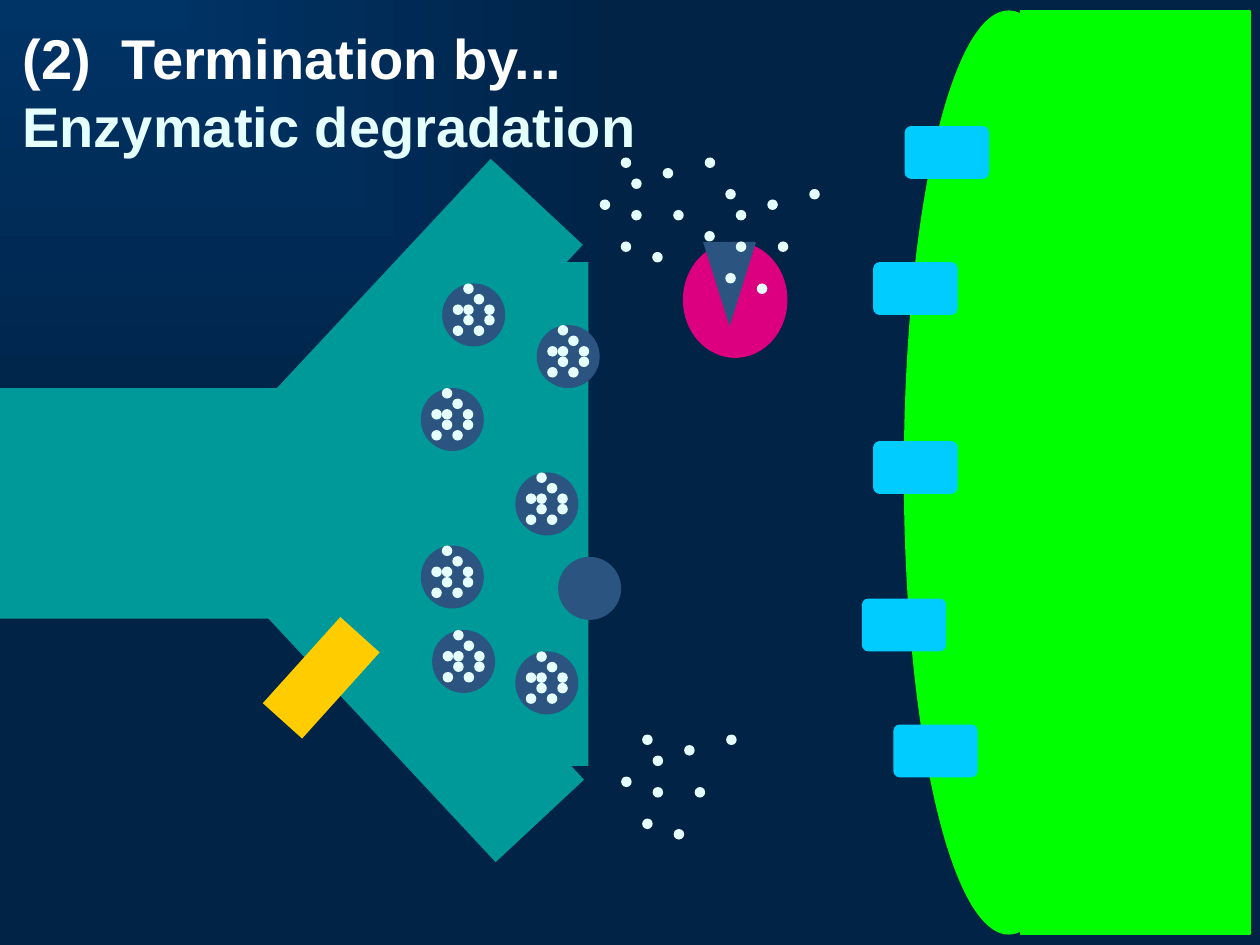
from lxml.etree import SubElement
from pptx import Presentation
from pptx.dml.color import RGBColor
from pptx.enum.shapes import MSO_SHAPE as SHAPE
from pptx.enum.text import MSO_AUTO_SIZE as AUTO_SIZE, PP_ALIGN as ALIGN
from pptx.oxml.ns import qn
from pptx.util import Inches, Pt

NAVY = RGBColor(0x00, 0x33, 0x66)
DEEP_NAVY = RGBColor(0x00, 0x23, 0x46)
WHITE = RGBColor(0xFF, 0xFF, 0xFF)
PALE = RGBColor(0xE5, 0xFF, 0xFF)
TEAL = RGBColor(0x00, 0x99, 0x99)
SLATE = RGBColor(0x2B, 0x54, 0x81)
MAGENTA = RGBColor(0xDC, 0x00, 0x81)
GREEN = RGBColor(0x00, 0xFF, 0x00)
SKY = RGBColor(0x00, 0xCC, 0xFF)
AMBER = RGBColor(0xFF, 0xCC, 0x00)

# Transmitter molecules sit on a grid of twelfths of an inch
UNIT = 1 / 12
VESICLE_DOTS = [(1, 2), (3, 4), (4, 2), (3, 1), (1, 4),
                (2, 2), (4, 3), (2, 0), (2, 3)]
CLOUD_DOTS = [(0, 4), (5, 9), (6, 1), (10, 0), (2, 8),
              (3, 2), (7, 5), (2, 0), (3, 5)]

VESICLES = [(3.34, 3.08), (3.34, 4.33), (4.09, 3.75), (4.26, 2.58),
            (4.09, 5.17), (3.43, 5), (3.51, 2.25)]
EMPTY_VESICLE = (4.43, 4.42)
CLOUDS = [(5.59, 1.5), (4.76, 1.25), (4.93, 5.83)]
RECEPTORS = [(7.18, 1), (6.93, 2.08), (6.93, 3.5), (6.84, 4.75), (7.09, 5.75)]


def add_filled(shapes, kind, x, y, w, h, color, rotation=0, outlined=False):
    sp = shapes.add_shape(kind, Inches(x), Inches(y), Inches(w), Inches(h))
    sp.shadow.inherit = False
    sp.rotation = rotation
    sp.fill.solid()
    sp.fill.fore_color.rgb = color
    if outlined:
        sp.line.color.rgb = color
        sp.line.width = Pt(1)
    else:
        sp.line.fill.background()
    return sp


def set_background(s):
    """Fill the slide with a gradient that spreads from the top left corner."""
    fill = s.background.fill
    fill.gradient()
    for stop, color in zip(fill.gradient_stops, (NAVY, DEEP_NAVY)):
        stop.color.rgb = color
    grad = s.element.find(".//" + qn("a:gradFill"))
    grad.remove(grad.find(qn("a:lin")))
    path = SubElement(grad, qn("a:path"), path="rect")
    SubElement(path, qn("a:fillToRect"), r="100000", b="100000")


def add_enzyme(s, x, y):
    shapes = s.shapes.add_group_shape().shapes
    add_filled(shapes, SHAPE.OVAL, x, y, 0.83, 0.92, MAGENTA)
    add_filled(shapes, SHAPE.ISOSCELES_TRIANGLE, x + 0.16, y, 0.42, 0.67,
               SLATE, rotation=180)


def add_axon_terminal(s, x, y):
    shapes = s.shapes.add_group_shape().shapes
    for dx, dy, w, h, rotation in [
        (0, 1, 4.66, 1.83, 0),
        (1.62, 0.17, 3.14, 1, 313),
        (1.72, 2.84, 3.05, 0.96, 227),
        (3.32, 0, 1.35, 4, 0),
    ]:
        add_filled(shapes, SHAPE.RECTANGLE, x + dx, y + dy, w, h, TEAL, rotation)


def add_dots(shapes, x, y, dots):
    for col, row in dots:
        add_filled(shapes, SHAPE.OVAL, x + col * UNIT, y + row * UNIT,
                   UNIT, UNIT, PALE)


def add_vesicle(shapes, x, y):
    add_filled(shapes, SHAPE.OVAL, x, y, 0.5, 0.5, SLATE)


def add_full_vesicle(s, x, y):
    shapes = s.shapes.add_group_shape().shapes
    add_vesicle(shapes, x, y)
    add_dots(shapes, x, y, VESICLE_DOTS)


def add_cloud(s, x, y):
    add_dots(s.shapes.add_group_shape().shapes, x, y, CLOUD_DOTS)


def add_receiving_cell(s, x, y, h):
    shapes = s.shapes.add_group_shape().shapes
    add_filled(shapes, SHAPE.OVAL, x, y, 1.65, h, GREEN, outlined=True)
    add_filled(shapes, SHAPE.RECTANGLE, x + 0.92, y, 1.82, h, GREEN, outlined=True)


def add_receptors(s, positions):
    shapes = s.shapes.add_group_shape().shapes
    for x, y in positions:
        sp = add_filled(shapes, SHAPE.ROUNDED_RECTANGLE, x, y, 0.67, 0.42, SKY)
        sp.adjustments[0] = 0.125


def add_title(s, x, y, w, h):
    tf = s.shapes.add_textbox(Inches(x), Inches(y), Inches(w), Inches(h)).text_frame
    tf.word_wrap = False
    tf.auto_size = AUTO_SIZE.SHAPE_TO_FIT_TEXT
    tf.text = "(2)  Termination by...\nEnzymatic degradation"
    for p, color in zip(tf.paragraphs, (WHITE, PALE)):
        p.alignment = ALIGN.LEFT
        p.font.name = "Arial"
        p.font.size = Pt(32)
        p.font.bold = True
        p.font.color.rgb = color


def main():
    prs = Presentation()
    prs.slide_width, prs.slide_height = Inches(10), Inches(7.5)
    s = prs.slides.add_slide(prs.slide_layouts[6])
    set_background(s)
    add_enzyme(s, 5.42, 1.92)
    add_axon_terminal(s, 0, 2.08)
    for x, y in VESICLES:
        add_full_vesicle(s, x, y)
    add_vesicle(s.shapes, *EMPTY_VESICLE)
    add_receiving_cell(s, 7.18, 0.09, 7.32)
    add_receptors(s, RECEPTORS)
    # Reuptake transporter in the terminal's lower membrane
    add_filled(s.shapes, SHAPE.RECTANGLE, 2.34, 4.92, 0.42, 0.92, AMBER, rotation=42)
    add_title(s, 0.08, 0.14, 5.1, 1.18)
    for x, y in CLOUDS:
        add_cloud(s, x, y)
    prs.save("out.pptx")


if __name__ == "__main__":
    main()
